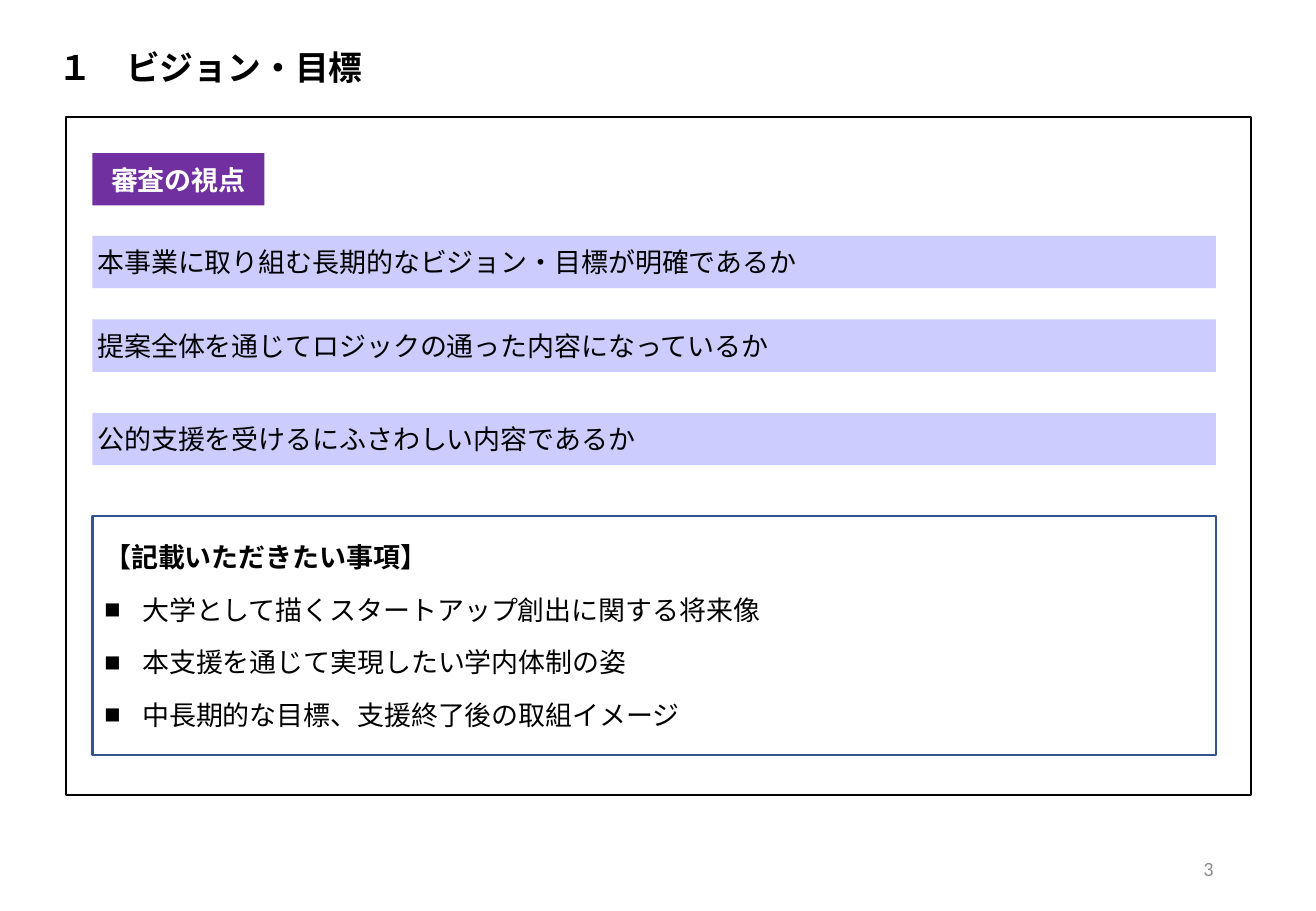
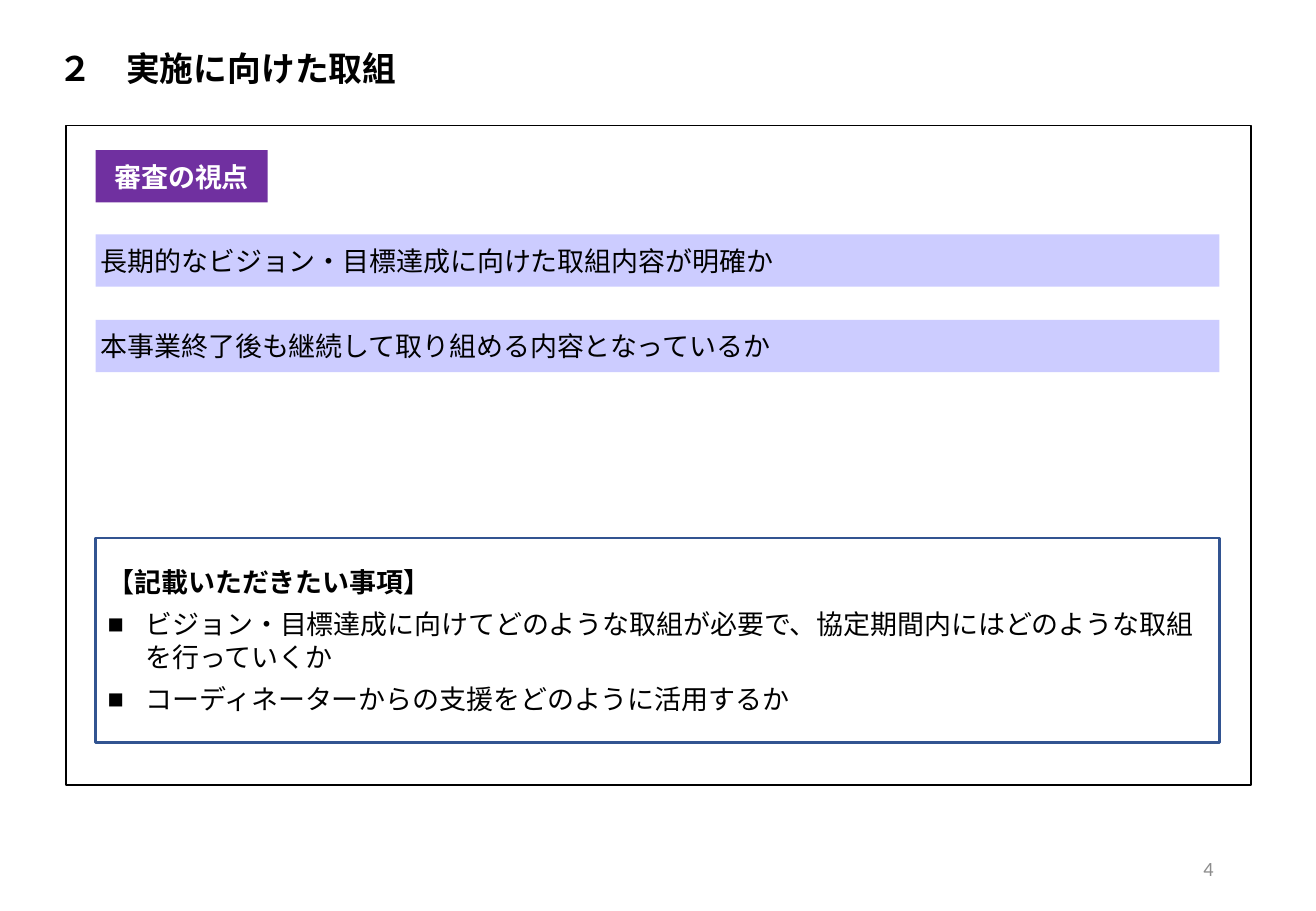
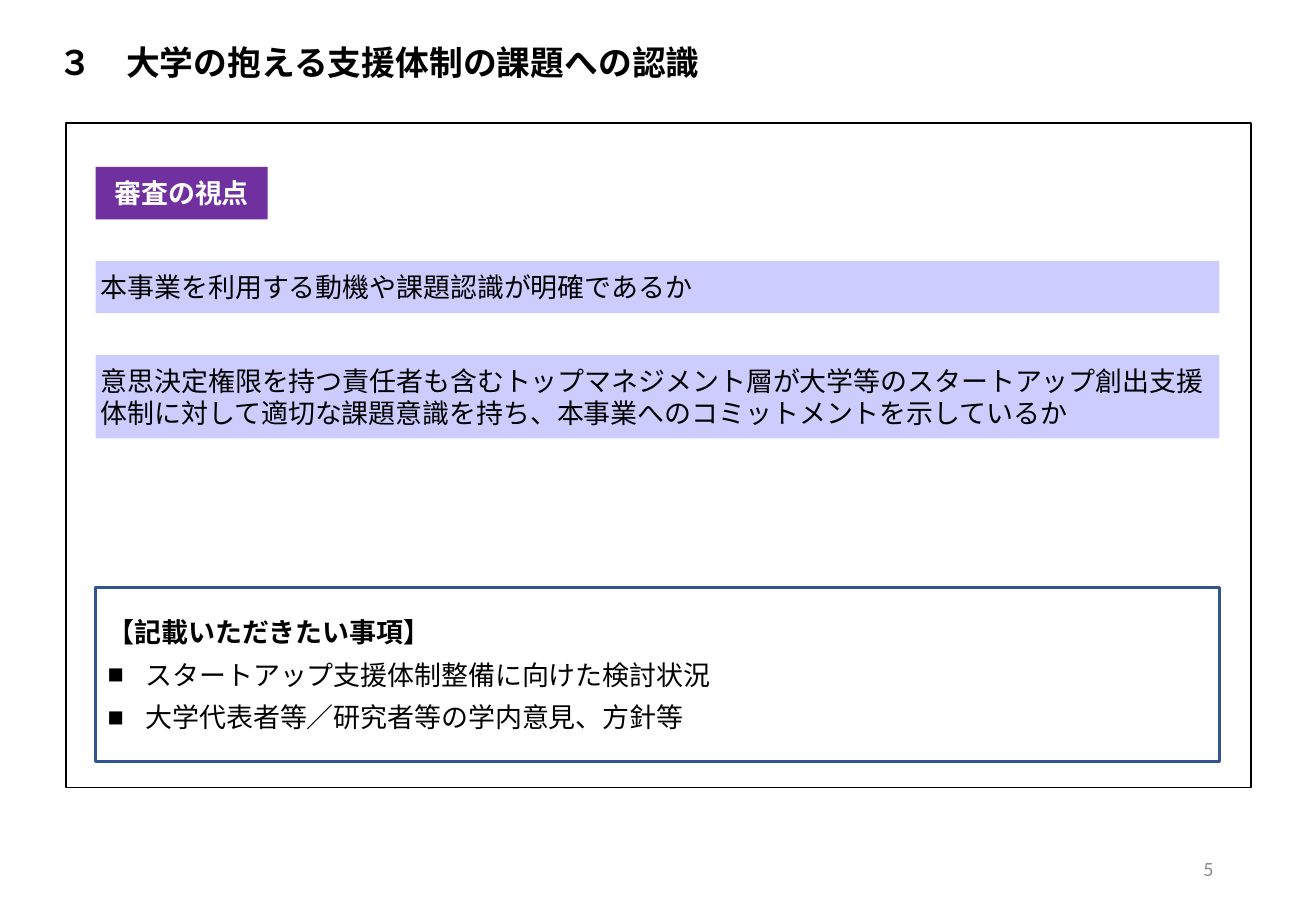
from dataclasses import dataclass

from lxml.etree import SubElement
from pptx import Presentation
from pptx.dml.color import RGBColor as Rgb
from pptx.enum.shapes import MSO_SHAPE as Kind
from pptx.enum.text import MSO_ANCHOR as Anchor, MSO_AUTO_SIZE as Fit, PP_ALIGN as Align
from pptx.oxml.ns import qn
from pptx.shapes.autoshape import Shape
from pptx.slide import Slide
from pptx.text.text import TextFrame as Frame, _Paragraph as Para
from pptx.util import Pt


# Shared look
@dataclass(frozen=True)
class Theme:
    black: str = "000000"
    white: str = "FFFFFF"
    grey: str = "8C8C8C"
    tag: str = "7030A0"
    bar: str = "CCCCFF"
    edge: str = "325491"
    sans: str = "Arial"
    head: str = "Calibri"
    cjk: str = "Noto Sans CJK JP"
    title: float = 20
    body: float = 16
    foot: float = 12


T = Theme()
ROW = 31        # height of a tag or a one-line bar
WIDE = 666      # width of bars and note boxes
PAD = 3.0       # tight inset


# Parts of a slide
@dataclass(frozen=True)
class Box:
    left: float
    top: float
    width: float
    height: float


@dataclass(frozen=True)
class Bar:
    text: str
    top: float
    height: float = ROW
    font: str = T.sans


@dataclass(frozen=True)
class Note:
    top: float
    height: float
    gap: float
    items: tuple[str, ...]


@dataclass(frozen=True)
class Page:
    number: int
    mark: str
    title: str
    title_top: float
    title_width: float
    panel_top: float
    panel_height: float
    left: float
    tag_top: float
    bars: tuple[Bar, ...]
    note: Note
    font: str = T.head


PAGES = (
    Page(3, "１", "ビジョン・目標", 24.5, 274, 69.3, 402, 54.7, 90.8,
         (Bar("本事業に取り組む長期的なビジョン・目標が明確であるか", 139.9),
          Bar("提案全体を通じてロジックの通った内容になっているか", 189.4),
          Bar("公的支援を受けるにふさわしい内容であるか", 244.8)),
         Note(306, 141.5, 12,
              ("大学として描くスタートアップ創出に関する将来像",
               "本支援を通じて実現したい学内体制の姿",
               "中長期的な目標、支援終了後の取組イメージ"))),
    Page(4, "２", "実施に向けた取組", 25.2, 292, 74.5, 391, 56.7, 89,
         (Bar("長期的なビジョン・目標達成に向けた取組内容が明確か", 139, font=T.head),
          Bar("本事業終了後も継続して取り組める内容となっているか", 189.6, font=T.head)),
         Note(319, 121, 6,
              ("ビジョン・目標達成に向けてどのような取組が必要で、"
               "協定期間内にはどのような取組を行っていくか",
               "コーディネーターからの支援をどのように活用するか"))),
    Page(5, "３", "大学の抱える支援体制の課題への認識", 21.6, 684, 72.9, 394, 56.7, 99,
         (Bar("本事業を利用する動機や課題認識が明確であるか", 154.7),
          Bar("意思決定権限を持つ責任者も含むトップマネジメント層が"
              "大学等のスタートアップ創出支援体制に対して適切な課題意識を持ち、"
              "本事業へのコミットメントを示しているか", 210.4, 49.5, T.cjk)),
         Note(348.2, 103.2, 6,
              ("スタートアップ支援体制整備に向けた検討状況",
               "大学代表者等／研究者等の学内意見、方針等")),
         T.sans),
)


# Drawing helpers
def place(box: Box) -> tuple[Pt, Pt, Pt, Pt]:
    return Pt(box.left), Pt(box.top), Pt(box.width), Pt(box.height)


def write(para: Para, text: str, size: float = T.body, font: str = T.sans,
          color: str = T.black, bold: bool = False) -> None:
    run = para.add_run()
    run.text = text
    run.font.size = Pt(size)
    run.font.name = font
    run.font.bold = bold
    run.font.color.rgb = Rgb.from_string(color)


def setup(frame: Frame, pad: float | None = None) -> Para:
    """Set wrap, anchor and insets; return the first paragraph."""
    frame.word_wrap = True
    frame.vertical_anchor = Anchor.MIDDLE
    if pad is not None:
        frame.margin_left = frame.margin_right = Pt(pad)
        frame.margin_top = frame.margin_bottom = Pt(pad)
    para = frame.paragraphs[0]
    para.alignment = Align.LEFT
    return para


def rect(slide: Slide, box: Box, fill: str, line: str = "", weight: float = 1) -> Shape:
    shape = slide.shapes.add_shape(Kind.RECTANGLE, *place(box))
    shape.shadow.inherit = False
    shape.fill.solid()
    shape.fill.fore_color.rgb = Rgb.from_string(fill)
    if line:
        shape.line.color.rgb = Rgb.from_string(line)
        shape.line.width = Pt(weight)
    else:
        shape.line.fill.background()
    return shape


def bullet(para: Para, indent: float = 22.5) -> None:
    props = para._p.get_or_add_pPr()
    props.set("marL", str(Pt(indent)))
    props.set("indent", str(-Pt(indent)))
    SubElement(props, qn("a:buFont"), typeface=T.sans)
    SubElement(props, qn("a:buChar"), char="■")


# Slide parts
def add_title(slide: Slide, page: Page) -> None:
    box = Box(31.7, page.title_top, page.title_width, 30.2)
    frame = slide.shapes.add_textbox(*place(box)).text_frame
    para = setup(frame, PAD)
    frame.auto_size = Fit.SHAPE_TO_FIT_TEXT
    write(para, page.mark + "　", T.title, T.head, bold=True)
    write(para, page.title, T.title, page.font, bold=True)


def add_tag(slide: Slide, page: Page) -> None:
    shape = rect(slide, Box(page.left, page.tag_top, 102, ROW), T.tag)
    para = setup(shape.text_frame, PAD)
    para.alignment = Align.CENTER
    write(para, "審査の視点", color=T.white, bold=True)


def add_bar(slide: Slide, left: float, bar: Bar) -> None:
    shape = rect(slide, Box(left, bar.top, WIDE, bar.height), T.bar)
    write(setup(shape.text_frame, PAD), bar.text, font=bar.font)


def add_note(slide: Slide, left: float, note: Note) -> None:
    shape = rect(slide, Box(left, note.top, WIDE, note.height), T.white, T.edge, 1.5)
    frame = shape.text_frame
    write(setup(frame), "【記載いただきたい事項】", bold=True)
    for item in note.items:
        para = frame.add_paragraph()
        para.alignment = Align.LEFT
        para.space_before = Pt(note.gap)
        bullet(para)
        write(para, item)


def add_foot(slide: Slide, number: int) -> None:
    box = Box(550.8, 500.4, 175.7, 28.8)
    para = setup(slide.shapes.add_textbox(*place(box)).text_frame)
    para.alignment = Align.RIGHT
    write(para, str(number), T.foot, T.head, T.grey)


def main() -> None:
    deck = Presentation()
    deck.slide_width, deck.slide_height = Pt(780), Pt(540)
    blank = deck.slide_layouts[6]
    for page in PAGES:
        slide = deck.slides.add_slide(blank)
        add_title(slide, page)
        rect(slide, Box(39, page.panel_top, 702.7, page.panel_height), T.white, T.black)
        add_tag(slide, page)
        for bar in page.bars:
            add_bar(slide, page.left, bar)
        add_note(slide, page.left, page.note)
        add_foot(slide, page.number)
    deck.save("out.pptx")


if __name__ == "__main__":
    main()
